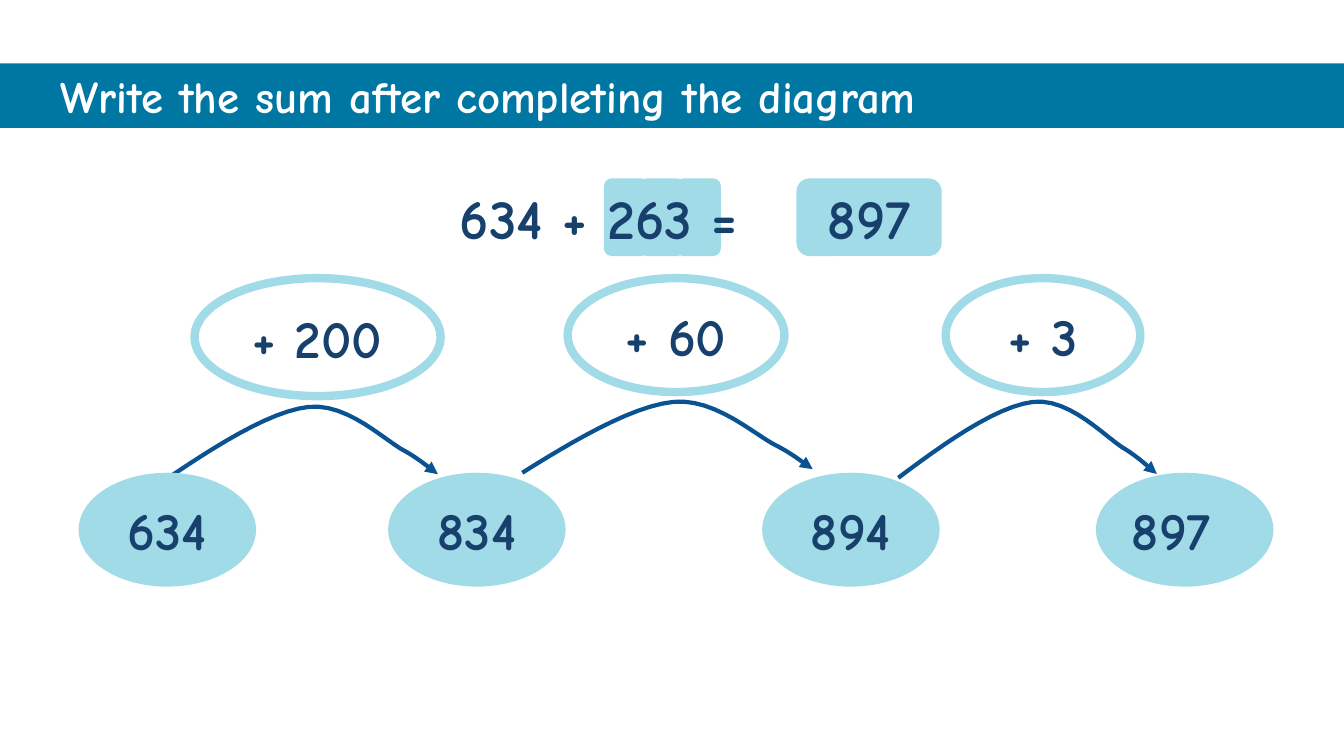
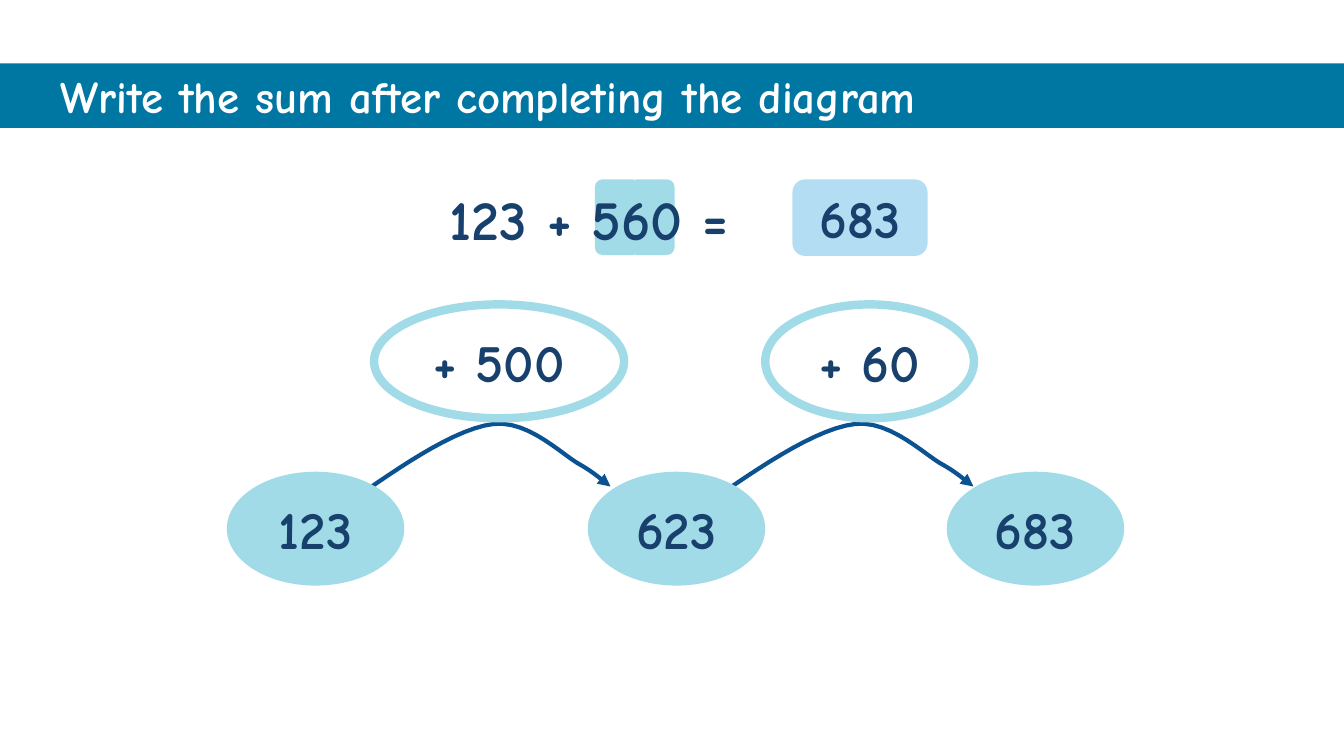
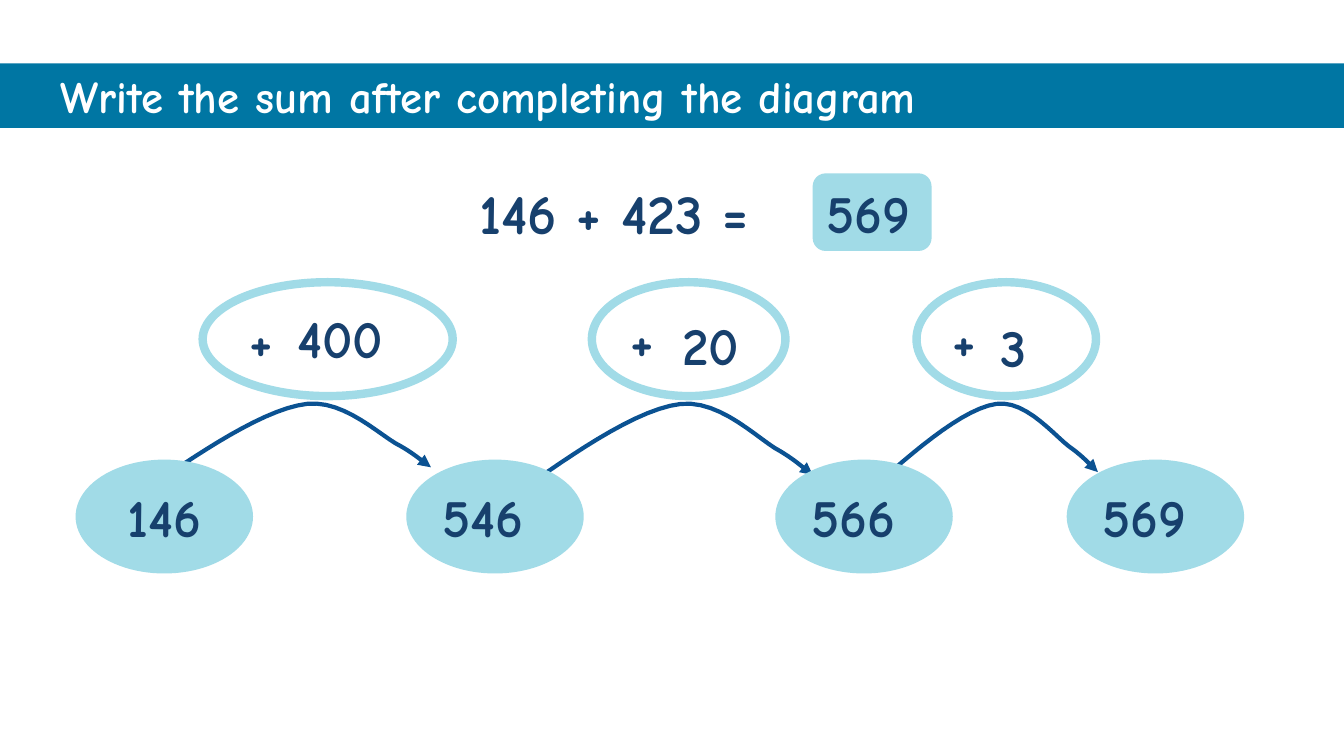
from dataclasses import dataclass

from lxml import etree
from pptx import Presentation
from pptx.dml.color import RGBColor
from pptx.enum.shapes import MSO_SHAPE
from pptx.enum.text import MSO_ANCHOR, MSO_AUTO_SIZE, PP_ALIGN
from pptx.oxml.ns import qn
from pptx.util import Inches, Pt

OVAL, ROUNDED = MSO_SHAPE.OVAL, MSO_SHAPE.ROUNDED_RECTANGLE
LEFT, CENTER = PP_ALIGN.LEFT, PP_ALIGN.CENTER
MIDDLE = MSO_ANCHOR.MIDDLE


@dataclass(frozen=True)
class Theme:
    font: str = "Comic Neue"
    white: RGBColor = RGBColor(0xFF, 0xFF, 0xFF)
    band: RGBColor = RGBColor(0x00, 0x76, 0xA3)
    aqua: RGBColor = RGBColor(0xA1, 0xDB, 0xE7)
    sky: RGBColor = RGBColor(0xB3, 0xDD, 0xF2)
    ink: RGBColor = RGBColor(0x17, 0x40, 0x6D)
    arrow: RGBColor = RGBColor(0x0B, 0x52, 0x92)
    title_size: int = 32
    sum_size: int = 40
    number_size: int = 38
    ring_width: int = 6
    arrow_width: int = 3


THEME = Theme()
TITLE = "Write the sum after completing the diagram"
HOP_HEIGHT = 1.13
NODE_SIZE = (1.76, 1.13)
ARC_START = (0, 1)
ARC_CURVES = [
    ((0.16, 0.59), (0.37, 0.07), (0.515, 0.01)),
    ((0.66, -0.05), (0.8, 0.5), (0.873, 0.635)),
    ((0.93, 0.76), (0.96, 0.87), (0.99, 0.95)),
]
ARC_STEPS = 12

SLIDES = [
    {
        "sum": ("634 + 263 =", 4.09, 1.77, 3.7),
        "digit_tiles": (3, 5.99, 0.355, 1.77, 0.77),
        "answer": ("897", (7.9, 1.77, 1.44, 0.77), THEME.aqua, THEME.sum_size, CENTER),
        "arcs": [(1.67, 4.03, 2.7, 0.71), (5.18, 3.98, 2.91, 0.71), (8.91, 3.98, 2.59, 0.76)],
        "hop_top": 2.76,
        "hop_align": CENTER,
        "hops": [("+ 200", 1.93, 2.44, 1.17), ("+ 60", 5.63, 2.15, HOP_HEIGHT),
                 ("+ 3", 9.38, 1.93, HOP_HEIGHT)],
        "node_top": 4.69,
        "nodes": [("634", 0.78, CENTER), ("834", 3.85, CENTER), ("894", 7.56, CENTER),
                  ("897", 10.87, LEFT)],
    },
    {
        "sum": ("123 + 560 =", 4.01, 1.78, 3.67),
        "digit_tiles": (2, 5.9, 0.34, 1.78, 0.75),
        "answer": ("683", (7.86, 1.78, 1.34, 0.76), THEME.sky, THEME.number_size, CENTER),
        "arcs": [(3.64, 4.2, 2.44, 0.66), (7.21, 4.2, 2.47, 0.66)],
        "hop_top": 3.02,
        "hop_align": CENTER,
        "hops": [("+ 500", 3.71, 2.48, HOP_HEIGHT), ("+ 60", 7.59, 2.07, HOP_HEIGHT)],
        "node_top": 4.68,
        "nodes": [("123", 2.25, CENTER), ("623", 5.83, CENTER), ("683", 9.39, CENTER)],
    },
    {
        "sum": ("146 + 423 =", 4.26, 1.72, 3.67),
        "answer": ("569", (8.06, 1.72, 1.18, 0.77), THEME.aqua, THEME.number_size, LEFT),
        "arcs": [(1.72, 4, 2.58, 0.67), (5.33, 4, 2.76, 0.75), (8.79, 4, 2.12, 0.72)],
        "hop_top": 2.8,
        "hop_align": LEFT,
        "hops": [("+", 2.01, 2.48, HOP_HEIGHT), ("+", 5.87, 1.92, HOP_HEIGHT),
                 ("+", 9.09, 1.78, HOP_HEIGHT)],
        "hop_numbers": [("400", 2.85, 2.98, 1.18), ("20", 6.67, 3.05, 0.85),
                        ("3", 9.82, 3.07, 0.53)],
        "node_top": 4.56,
        "nodes": [("146", 0.75, CENTER), ("546", 4.03, LEFT), ("566", 7.69, LEFT),
                  ("569", 10.58, LEFT)],
    },
]


def write(sp, text, size, color=THEME.ink, align=CENTER):
    p = sp.text_frame.paragraphs[0]
    p.text = text
    p.alignment = align
    p.font.name = THEME.font
    p.font.size = Pt(size)
    p.font.bold = True
    p.font.color.rgb = color


def add_shape(slide, kind, box, fill=None, ring=None):
    sp = slide.shapes.add_shape(kind, *map(Inches, box))
    sp.shadow.inherit = False
    if fill is None:
        sp.fill.background()
    else:
        sp.fill.solid()
        sp.fill.fore_color.rgb = fill
    if ring is None:
        sp.line.fill.background()
    else:
        sp.line.color.rgb = ring
        sp.line.width = Pt(THEME.ring_width)
    sp.text_frame.vertical_anchor = MIDDLE
    return sp


def add_label(slide, text, x, y, w, h, size, align):
    sp = slide.shapes.add_textbox(*map(Inches, (x, y, w, h)))
    sp.text_frame.word_wrap = True
    write(sp, text, size, align=align)


def bezier(points, t):
    weights = ((1 - t) ** 3, 3 * t * (1 - t) ** 2, 3 * t * t * (1 - t), t ** 3)
    return tuple(sum(k * pt[axis] for k, pt in zip(weights, points)) for axis in (0, 1))


def arc_points():
    points = [ARC_START]
    for curve in ARC_CURVES:
        start = points[-1]
        points += [bezier((start, *curve), i / ARC_STEPS) for i in range(1, ARC_STEPS + 1)]
    return points


def add_arc(slide, x, y, w, h):
    start, *rest = [(Inches(x + u * w), Inches(y + v * h)) for u, v in arc_points()]
    builder = slide.shapes.build_freeform(*start)
    builder.add_line_segments(rest, close=False)
    sp = builder.convert_to_shape()
    sp.shadow.inherit = False
    sp.fill.background()
    sp.line.color.rgb = THEME.arrow
    sp.line.width = Pt(THEME.arrow_width)
    ln = sp.line._get_or_add_ln()
    etree.SubElement(ln, qn("a:round"))
    etree.SubElement(ln, qn("a:tailEnd"), type="triangle")


def add_title(slide, width):
    sp = slide.shapes.title
    sp.left, sp.top, sp.width, sp.height = 0, Inches(0.63), width, Inches(0.64)
    sp.fill.solid()
    sp.fill.fore_color.rgb = THEME.band
    tf = sp.text_frame
    tf.auto_size = MSO_AUTO_SIZE.NONE
    tf.vertical_anchor = MIDDLE
    tf.margin_left = Inches(0.6)
    write(sp, TITLE, THEME.title_size, THEME.white, LEFT)


def add_sum(slide, data):
    text, box, fill, size, align = data["answer"]
    write(add_shape(slide, ROUNDED, box, fill), text, size, align=align)
    if "digit_tiles" in data:
        count, x, step, y, h = data["digit_tiles"]
        for i in range(count):
            add_shape(slide, ROUNDED, (x + i * step, y, 0.45, h), THEME.aqua)
    add_label(slide, *data["sum"], 0.77, THEME.sum_size, CENTER)


def add_diagram(slide, data):
    for arc in data["arcs"]:
        add_arc(slide, *arc)
    for text, x, w, h in data["hops"]:
        sp = add_shape(slide, OVAL, (x, data["hop_top"], w, h), ring=THEME.aqua)
        write(sp, text, THEME.number_size, align=data["hop_align"])
    for hop_number in data.get("hop_numbers", []):
        add_label(slide, *hop_number, 0.74, THEME.number_size, LEFT)
    for text, x, align in data["nodes"]:
        sp = add_shape(slide, OVAL, (x, data["node_top"], *NODE_SIZE), THEME.aqua)
        write(sp, text, THEME.number_size, align=align)


def main():
    prs = Presentation()
    prs.slide_width, prs.slide_height = Inches(13.33), Inches(7.5)
    title_only = prs.slide_layouts.get_by_name("Title Only")
    for data in SLIDES:
        slide = prs.slides.add_slide(title_only)
        add_title(slide, prs.slide_width)
        add_sum(slide, data)
        add_diagram(slide, data)
    prs.save("out.pptx")


if __name__ == "__main__":
    main()
